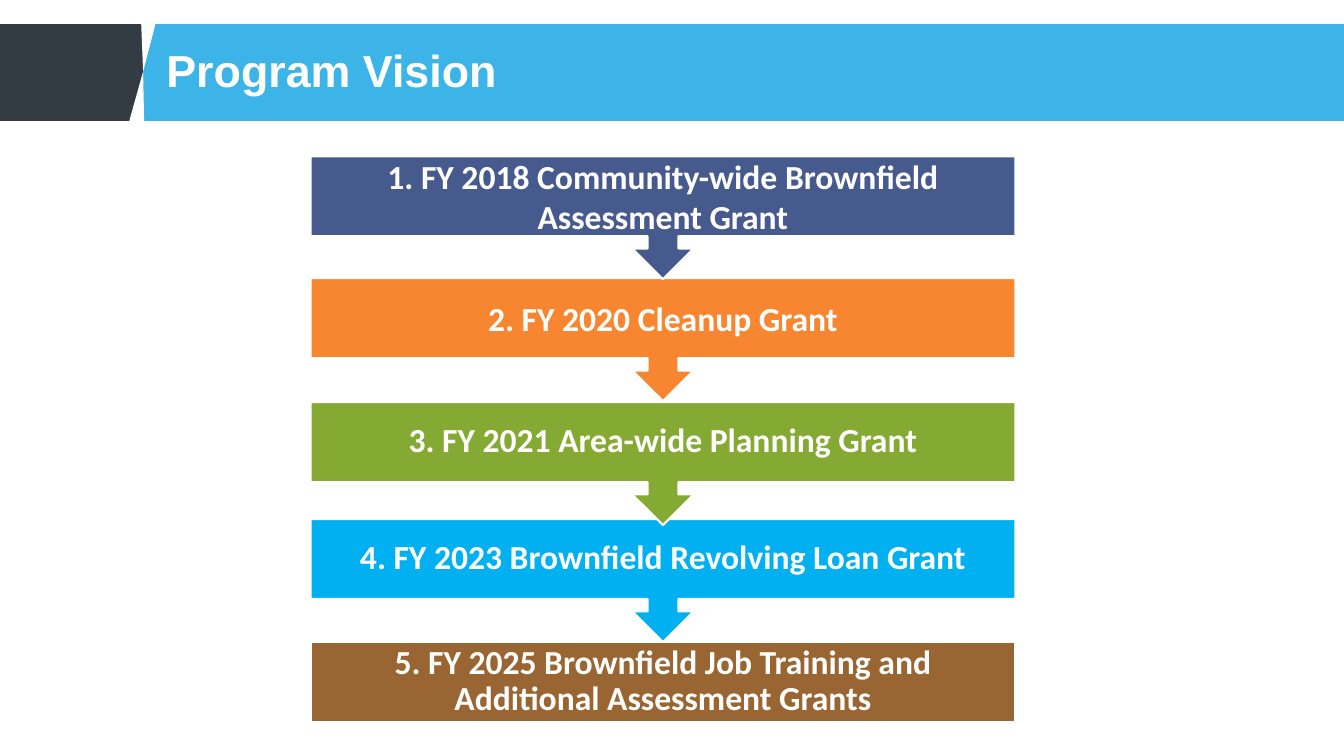
import pptx
import pptx.util
import pptx.dml.color
import pptx.enum.shapes
import pptx.enum.text

THEME = {
    "white": "FFFFFF", "dark": "333C42", "sky": "3CB4E7",
    "navy": "475A8D", "orange": "F88630", "green": "84AA33",
    "blue": "00B0F0", "brown": "996633",
    "head": {"name": "Arial", "size": pptx.util.Pt(32), "bold": True},
    "step": {"name": "Calibri", "size": pptx.util.Pt(24), "bold": True},
}
KIND = pptx.enum.shapes.MSO_SHAPE
ALIGN = pptx.enum.text.PP_ALIGN
MID = pptx.enum.text.MSO_ANCHOR.MIDDLE
inch = pptx.util.Inches


def paint(shape, tint, edge=0):
    shape.shadow.inherit = False
    shape.fill.solid()
    shape.fill.fore_color.rgb = pptx.dml.color.RGBColor.from_string(THEME[tint])
    if edge:
        shape.line.color.rgb = pptx.dml.color.RGBColor.from_string(THEME["white"])
        shape.line.width = pptx.util.Pt(edge)
    else:
        shape.line.fill.background()


def write(shape, text, font, align, space, pad):
    frame = shape.text_frame
    form = {"word_wrap": True, "vertical_anchor": MID,
            "auto_size": pptx.enum.text.MSO_AUTO_SIZE.NONE,
            "margin_left": pad[0], "margin_right": pad[0],
            "margin_top": pad[1], "margin_bottom": pad[1]}
    for key, value in form.items():
        setattr(frame, key, value)
    line = frame.paragraphs[0]
    line.alignment, line.line_spacing = align, space
    run = line.add_run()
    run.text = text
    for key, value in THEME[font].items():
        setattr(run.font, key, value)
    run.font.color.rgb = pptx.dml.color.RGBColor.from_string(THEME["white"])


deck = pptx.Presentation()
deck.slide_width, deck.slide_height = inch(13.33), inch(7.5)
slide = deck.slides.add_slide(deck.slide_layouts[5])
shapes = slide.shapes

# Header band: dark tab, blue bar, white slash between them
top, high, split = inch(0.24), inch(0.96), inch(1.42)
for left, wide, tint in [(0, split, "dark"),
                         (split, deck.slide_width - split, "sky")]:
    paint(shapes.add_shape(KIND.RECTANGLE, left, top, wide, high), tint)

# Slash points are in hundredths of an inch
slash = shapes.build_freeform(140, 21, scale=inch(0.01))
slash.add_line_segments([(142, 71), (155, 21)])
slash.move_to(143, 121)
slash.add_line_segments([(142, 71), (128, 121)])
paint(slash.convert_to_shape(), "white")

# Title, brought in front of the band
title = shapes.title
for key, value in {"left": inch(1.55), "top": top,
                   "width": inch(11.64), "height": high}.items():
    setattr(title, key, value)
write(title, "Program Vision", "head", ALIGN.LEFT, 0.9, (inch(0.1), inch(0.05)))
slash_end = shapes[-1].element
slash_end.addnext(title.element)

# Steps, last one first so that each arrow lies over the next bar
left, wide, bar, call = inch(3.08), inch(6.99), inch(0.79), inch(1.22)
steps = [
    (1.55, "navy", 1.0, "1. FY 2018 Community-wide Brownfield Assessment Grant"),
    (2.76, "orange", 1.0, "2. FY 2020 Cleanup Grant"),
    (3.99, "green", 0.9, "3. FY 2021 Area-wide Planning Grant"),
    (5.15, "blue", 0.9, "4. FY 2023 Brownfield Revolving Loan Grant"),
    (6.37, "brown", 0.9,
     "5. FY 2025 Brownfield Job Training and Additional Assessment Grants"),
]
for step in reversed(steps):
    y, tint, space, text = step
    if step is steps[-1]:
        box = shapes.add_shape(KIND.RECTANGLE, left, inch(y), wide, bar)
    else:
        box = shapes.add_shape(KIND.UP_ARROW_CALLOUT, left, inch(y), wide, call)
        box.rotation = 180
    paint(box, tint, 1.5)
    label = shapes.add_textbox(left, inch(y), wide, bar)
    write(label, text, "step", ALIGN.CENTER, space, (inch(0.19), inch(0.19)))

deck.save("out.pptx")
